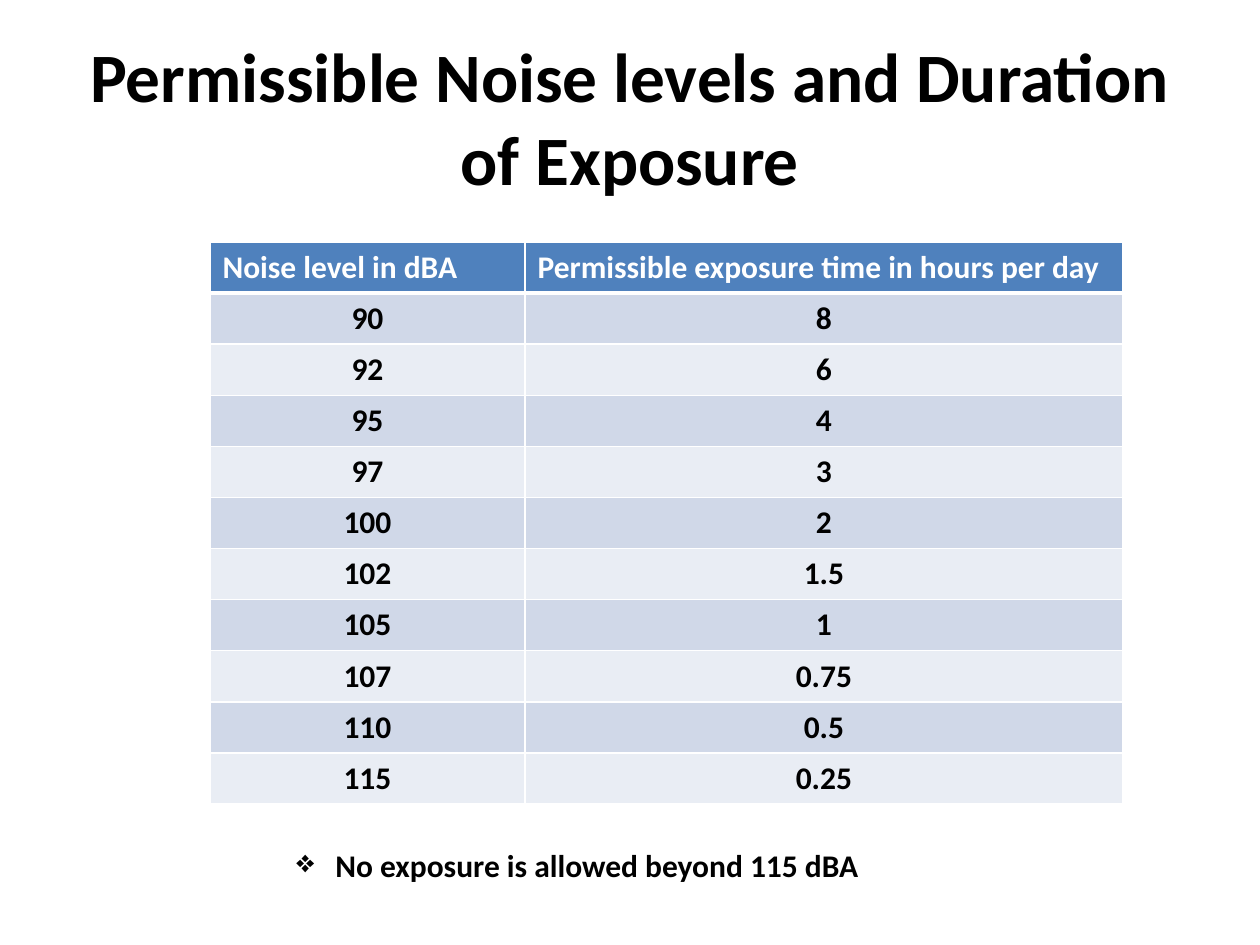
"""Build a slide with a table of permissible noise levels and exposure times."""
from lxml.etree import SubElement
from pptx import Presentation
from pptx.dml.color import RGBColor
from pptx.enum.text import MSO_ANCHOR, MSO_AUTO_SIZE, PP_ALIGN
from pptx.oxml.ns import qn
from pptx.util import Pt

PX = 914400 // 126
TITLE = "Permissible Noise levels and Duration of Exposure"
HEADER = ("Noise level in dBA", "Permissible exposure time in hours per day")
LIMITS = [
    ("90", "8"), ("92", "6"), ("95", "4"), ("97", "3"), ("100", "2"),
    ("102", "1.5"), ("105", "1"), ("107", "0.75"), ("110", "0.5"), ("115", "0.25"),
]
NOTE = "No exposure is allowed beyond 115 dBA"
COLUMNS = (315, 598)
ROW_HEIGHT = 51
BANDS = ("E9EDF4", "D0D8E8")
BLACK, WHITE, BLUE = "000000", "FFFFFF", "4F81BD"


def px(*values):
    return [v * PX for v in values]


def rgb(color):
    return RGBColor.from_string(color)


def write(tf, text, size, color=BLACK, align=PP_ALIGN.LEFT):
    p = tf.paragraphs[0]
    p.alignment = align
    r = p.add_run()
    r.text = text
    for name, value in {"name": "Calibri", "size": Pt(size), "bold": True}.items():
        setattr(r.font, name, value)
    r.font.color.rgb = rgb(color)
    return p


def set_borders(cell, widths):
    tcPr = cell._tc.get_or_add_tcPr()
    for index, (side, width) in enumerate(widths.items()):
        ln = tcPr.makeelement(qn(f"a:{side}"), {"w": str(Pt(width))})
        fill = SubElement(ln, qn("a:solidFill"))
        SubElement(fill, qn("a:srgbClr"), val=WHITE)
        tcPr.insert(index, ln)


def add_title(slide):
    sp = slide.shapes.title
    sp.left, sp.top, sp.width, sp.height = px(63, 38, 1134, 157)
    tf = sp.text_frame
    tf.auto_size = MSO_AUTO_SIZE.NONE
    tf.vertical_anchor = MSO_ANCHOR.MIDDLE
    write(tf, TITLE, 39.6, align=PP_ALIGN.CENTER)


def add_limits(slide):
    rows = [HEADER, *LIMITS]
    box = px(210, 242, sum(COLUMNS), ROW_HEIGHT * len(rows))
    table = slide.shapes.add_table(len(rows), len(COLUMNS), *box).table
    for column, width in zip(table.columns, px(*COLUMNS)):
        column.width = width
    for i, row in enumerate(rows):
        table.rows[i].height = ROW_HEIGHT * PX
        head = i == 0
        for j, text in enumerate(row):
            cell = table.cell(i, j)
            cell.fill.solid()
            cell.fill.fore_color.rgb = rgb(BLUE if head else BANDS[i % 2])
            set_borders(cell, {"lnL": 1, "lnR": 1, "lnT": 3 if i == 1 else 1,
                               "lnB": 3 if head else 1})
            write(cell.text_frame, text, 18, WHITE if head else BLACK,
                  PP_ALIGN.LEFT if head else PP_ALIGN.CENTER)


def add_note(slide):
    tf = slide.shapes.add_textbox(*px(284, 840, 714, 50)).text_frame
    tf.word_wrap = True
    tf.auto_size = MSO_AUTO_SIZE.SHAPE_TO_FIT_TEXT
    pPr = write(tf, NOTE, 18)._p.get_or_add_pPr()
    indent = 39 * PX
    pPr.set("marL", str(indent))
    pPr.set("indent", str(-indent))
    SubElement(pPr, qn("a:buChar"), char="❖")


def main():
    prs = Presentation()
    prs.slide_width, prs.slide_height = px(1260, 945)
    slide = prs.slides.add_slide(prs.slide_layouts[5])
    add_title(slide)
    add_limits(slide)
    add_note(slide)
    prs.save("out.pptx")


if __name__ == "__main__":
    main()
